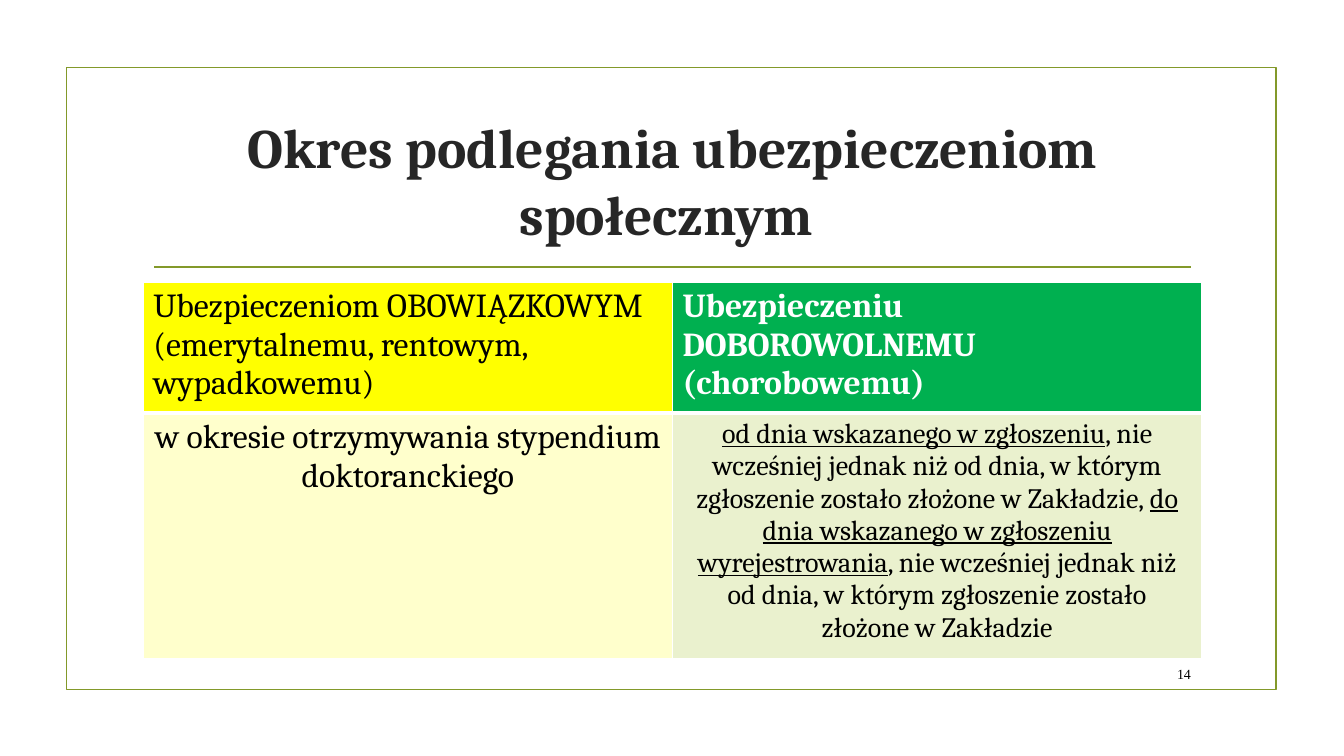
"""Build the slide on periods of social insurance cover."""
from lxml import etree
from pptx import Presentation
from pptx import util as u
from pptx.dml.color import RGBColor
from pptx.enum import shapes, text
from pptx.oxml.ns import qn

COLORS = {
    "olive": "83992A", "title": "262626", "black": "000000", "white": "FFFFFF",
    "yellow": "FFFF00", "green": "00B050", "cream": "FFFFCC", "pale": "EAF1CE",
}
ALIGN = text.PP_ALIGN
ANCHOR = text.MSO_ANCHOR


class SlideBuilder:
    """Hold the style and the current slide."""

    def __init__(self, slide):
        """Keep the slide and its default text format."""
        self.slide = slide
        self.base = {"name": "Cambria", "size": 24, "color": "black", "bold": False}

    def color(self, name):
        """Return a named colour."""
        return RGBColor.from_string(COLORS[name])

    def outline(self, line):
        """Apply the olive rule style."""
        line.color.rgb = self.color("olive")
        line.width = u.Pt(1.25)

    def frame(self, left, top, width, height):
        """Add the unfilled border rectangle."""
        shape = self.slide.shapes.add_shape(
            shapes.MSO_SHAPE.RECTANGLE, *map(u.Inches, (left, top, width, height)))
        shape.shadow.inherit = False
        shape.fill.background()
        self.outline(shape.line)

    def rule(self, left, right, y):
        """Add a horizontal rule."""
        connector = self.slide.shapes.add_connector(
            shapes.MSO_CONNECTOR.STRAIGHT, *map(u.Inches, (left, y, right, y)))
        self.outline(connector.line)
        etree.SubElement(connector._element.spPr, qn("a:effectLst"))

    def add_text(self, frame, paragraphs, align=ALIGN.LEFT, **style):
        """Add paragraphs, each a list of (words, underlined) runs."""
        for index, runs in enumerate(paragraphs):
            paragraph = frame.add_paragraph() if index else frame.paragraphs[0]
            paragraph.alignment = align
            for words, underlined in runs:
                run = paragraph.add_run()
                run.text = words
                values = {**self.base, **style, "underline": underlined}
                run.font.color.rgb = self.color(values.pop("color"))
                values["size"] = u.Pt(values["size"])
                for key, value in values.items():
                    setattr(run.font, key, value)

    def textbox(self, left, top, width, height, words, **style):
        """Add a wrapped, vertically centred text box."""
        box = self.slide.shapes.add_textbox(
            *map(u.Inches, (left, top, width, height)))
        box.text_frame.word_wrap = True
        box.text_frame.vertical_anchor = ANCHOR.MIDDLE
        self.add_text(box.text_frame, [[(words, False)]], **style)

    def borders(self, cell, bottom):
        """Draw white cell borders with the given bottom width in points."""
        properties = cell._tc.get_or_add_tcPr()
        for index, (side, width) in enumerate(
                {"L": 1, "R": 1, "T": 1, "B": bottom}.items()):
            line = etree.Element(qn(f"a:ln{side}"), w=str(u.Pt(width)))
            fill = etree.SubElement(line, qn("a:solidFill"))
            etree.SubElement(fill, qn("a:srgbClr"), val=COLORS["white"])
            properties.insert(index, line)

    def table(self, left, top, width, heights, rows):
        """Add a table of (fill, paragraphs, style) cells."""
        grid = self.slide.shapes.add_table(
            len(rows), len(rows[0]),
            *map(u.Inches, (left, top, width, sum(heights)))).table
        for row_index, (height, row) in enumerate(zip(heights, rows)):
            grid.rows[row_index].height = u.Inches(height)
            for column_index, (fill, paragraphs, style) in enumerate(row):
                cell = grid.cell(row_index, column_index)
                cell.fill.solid()
                cell.fill.fore_color.rgb = self.color(fill)
                self.borders(cell, 1 if row_index else 3)
                self.add_text(cell.text_frame, paragraphs, **style)


def main():
    """Build and save the slide."""
    presentation = Presentation()
    presentation.slide_width = u.Inches(13.33)
    presentation.slide_height = u.Inches(7.5)
    builder = SlideBuilder(
        presentation.slides.add_slide(presentation.slide_layouts[6]))

    builder.frame(0.66, 0.67, 12, 6.17)
    builder.rule(1.53, 11.81, 2.65)
    builder.textbox(1.42, 1.07, 10.5, 1.43,
                    "Okres podlegania ubezpieczeniom społecznym ",
                    align=ALIGN.CENTER, size=39.6, color="title", bold=True)

    not_before = (", nie wcześniej jednak niż od dnia, "
                  "w którym zgłoszenie zostało złożone w Zakładzie")
    voluntary_period = [
        ("od dnia wskazanego w zgłoszeniu", True),
        (not_before + ", ", False),
        ("do dnia wskazanego w zgłoszeniu wyrejestrowania", True),
        (not_before, False),
    ]
    builder.table(1.42, 2.8, 10.5, (1.25, 2.33), [
        [("yellow", [[("Ubezpieczeniom OBOWIĄZKOWYM "
                       "(emerytalnemu, rentowym, wypadkowemu)", False)]], {}),
         ("green", [[("Ubezpieczeniu DOBOROWOLNEMU", False)],
                    [("(chorobowemu)", False)]],
          {"color": "white", "bold": True})],
        [("cream", [[("w okresie otrzymywania stypendium doktoranckiego", False)]],
          {"align": ALIGN.CENTER}),
         ("pale", [voluntary_period], {"align": ALIGN.CENTER, "size": 20})],
    ])
    builder.textbox(11.32, 6.53, 0.59, 0.31, "14", align=ALIGN.RIGHT,
                    name="Times New Roman", size=10)
    presentation.save("out.pptx")


if __name__ == "__main__":
    main()
